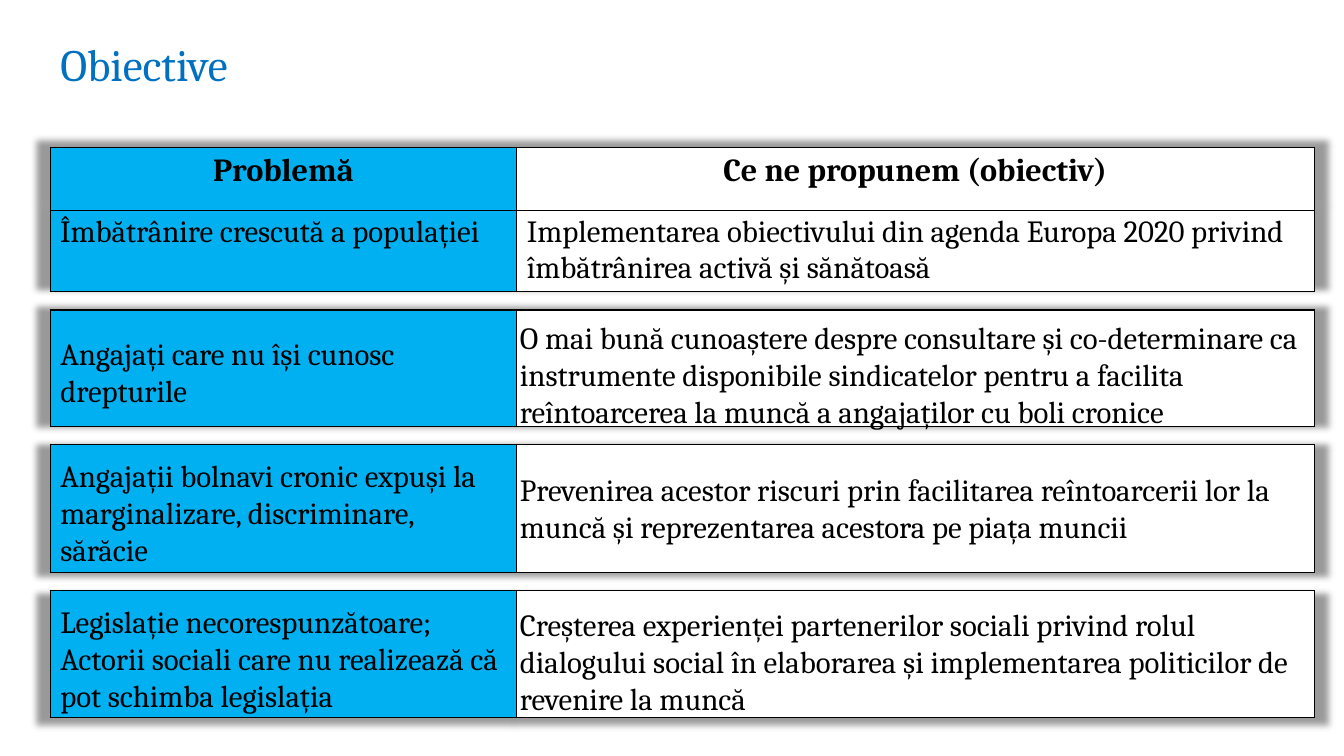
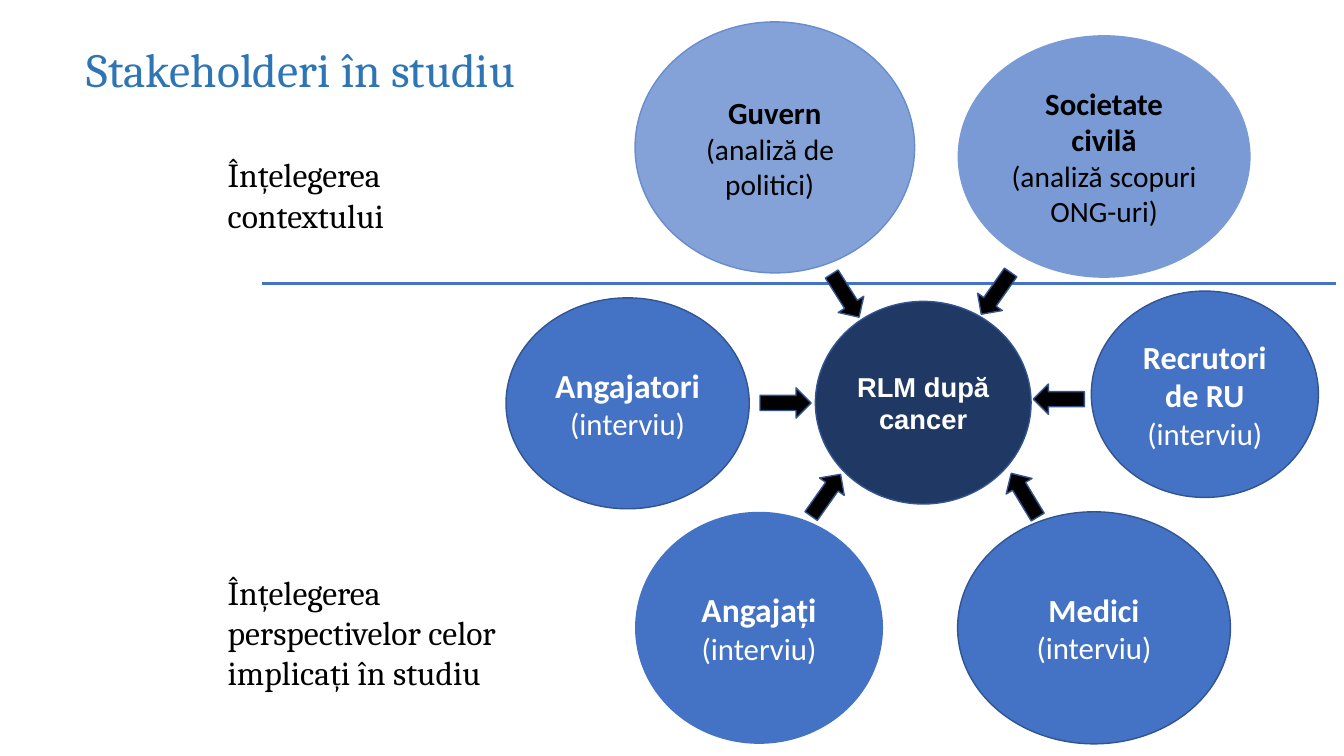
from dataclasses import dataclass
from typing import Any, Optional

from lxml import etree
from pptx import Presentation
from pptx.dml.color import RGBColor
from pptx.enum.shapes import MSO_CONNECTOR, MSO_SHAPE
from pptx.enum.text import MSO_ANCHOR, PP_ALIGN
from pptx.oxml import parse_xml
from pptx.oxml.ns import nsdecls, qn
from pptx.util import Inches, Pt

WIDE, HIGH = Inches(13.33), Inches(7.5)
LEFT, MID = PP_ALIGN.LEFT, PP_ALIGN.CENTER
TOP, MIDDLE = MSO_ANCHOR.TOP, MSO_ANCHOR.MIDDLE
OVAL, ARROW = MSO_SHAPE.OVAL, MSO_SHAPE.RIGHT_ARROW
LINE = MSO_CONNECTOR.STRAIGHT

SERIF, SANS, PLAIN = "Cambria", "Calibri", "Arial"
BLACK, WHITE, SKY = "000000", "FFFFFF", "00B0F0"
BLUE, NAVY, EDGE = "4472C4", "203864", "325491"


@dataclass
class Box:
    """A place in percent of the slide's width and height."""
    x: float
    y: float
    w: float
    h: float


@dataclass
class Text:
    """One paragraph and its look."""
    words: str
    size: float
    color: str = BLACK
    bold: bool = False
    font: str = SERIF
    align: Any = LEFT
    space: Optional[float] = None
    indent: tuple[float, float] = (0, 0)


@dataclass
class Row:
    """A table row, filled or a gap, with its cell texts."""
    high: float
    full: bool = True
    texts: tuple[Text, ...] = ()


@dataclass
class Bubble:
    """An ellipse with a bold name and a note below it."""
    box: Box
    texts: list[Text]
    fill: str = BLUE
    edge: Optional[str] = EDGE
    inset: float = 0.1


@dataclass
class Turn:
    """An arrow's corner and its angle."""
    x: float
    y: float
    angle: float


def color(code: str) -> RGBColor:
    """Turn a hex string into a colour."""
    return RGBColor.from_string(code)


def across(share: float) -> int:
    """Return a share of the slide's width."""
    return int(WIDE * share / 100)


def down(share: float) -> int:
    """Return a share of the slide's height."""
    return int(HIGH * share / 100)


def place(box: Box) -> tuple[int, int, int, int]:
    """Turn a box into slide lengths."""
    return across(box.x), down(box.y), across(box.w), down(box.h)


def apply(item: Any, values: dict[str, Any]) -> None:
    """Set each named value on the item."""
    for name, value in values.items():
        setattr(item, name, value)


def write(frame: Any, texts: list[Text]) -> None:
    """Fill a text frame with styled paragraphs."""
    for index, text in enumerate(texts):
        para = frame.add_paragraph() if index else frame.paragraphs[0]
        apply(para, {"alignment": text.align, "line_spacing": text.space})
        for name, size in zip(("marL", "indent"), text.indent):
            para._p.get_or_add_pPr().set(name, str(Inches(size)))
        run = para.add_run()
        run.text = text.words
        apply(run.font, {"name": text.font, "size": Pt(text.size), "bold": text.bold})
        run.font.color.rgb = color(text.color)


def label(slide: Any, box: Box, texts: list[Text], anchor: Any = TOP) -> None:
    """Add a wrapped text box."""
    frame = slide.shapes.add_textbox(*place(box)).text_frame
    apply(frame, {"word_wrap": True, "vertical_anchor": anchor})
    write(frame, texts)


def title(slide: Any, box: Box, words: str, size: float, tint: str) -> None:
    """Add a slide title."""
    label(slide, box, [Text(words, size, tint, space=0.9)], MIDDLE)


def solid(slide: Any, kind: Any, box: Box, fill: str, edge: Optional[str]) -> Any:
    """Add a filled shape with an optional outline."""
    shape = slide.shapes.add_shape(kind, *place(box))
    shape.shadow.inherit = False
    shape.fill.solid()
    shape.fill.fore_color.rgb = color(fill)
    if edge:
        shape.line.color.rgb = color(edge)
        shape.line.width = Pt(1)
    else:
        shape.line.fill.background()
    return shape


def bubble(slide: Any, item: Bubble) -> None:
    """Draw a bubble with its text."""
    frame = solid(slide, OVAL, item.box, item.fill, item.edge).text_frame
    pad = Inches(item.inset)
    apply(frame, {"word_wrap": True, "vertical_anchor": MIDDLE,
                  "margin_left": pad, "margin_right": pad})
    write(frame, item.texts)


def named(name: str, note: str, tint: str, sizes: tuple[float, float]) -> list[Text]:
    """Return a bold name and a plain note."""
    return [Text(name, sizes[0], tint, True, SANS, MID),
            Text(note, sizes[1], tint, False, SANS, MID)]


def border(cell: Any, full: bool) -> None:
    """Give a cell black borders, for a gap only above and below."""
    props = cell._tc.get_or_add_tcPr()
    ink = f'<a:solidFill><a:srgbClr val="{BLACK}"/></a:solidFill>'
    for index, side in enumerate(("lnL", "lnR", "lnT", "lnB")):
        paint = ink if full or index > 1 else "<a:noFill/>"
        props.insert(index, parse_xml(
            f'<a:{side} {nsdecls("a")} w="12700">{paint}</a:{side}>'))


def dress(cell: Any, full: bool, fill: str) -> None:
    """Set the fill, margins and borders of a cell."""
    if full:
        cell.margin_bottom = 0
        cell.fill.solid()
        cell.fill.fore_color.rgb = color(fill)
    else:
        apply(cell, {"margin_top": 0, "margin_bottom": 0})
        cell.fill.background()
        para = cell.text_frame.paragraphs[0]._p
        etree.SubElement(para, qn("a:endParaRPr")).set("sz", "600")
    border(cell, full)


def grid(slide: Any, x: float, y: float, cols: list[float], rows: list[Row]) -> None:
    """Draw the table with gaps and a soft shadow."""
    box = Box(x, y, sum(cols), sum(row.high for row in rows))
    table = slide.shapes.add_table(len(rows), len(cols), *place(box)).table
    apply(table, {"first_row": False, "horz_banding": False})
    table._tbl.tblPr.insert(0, parse_xml(
        f'<a:effectLst {nsdecls("a")}><a:outerShdw blurRad="63500" sx="102000" '
        f'sy="102000" algn="ctr" rotWithShape="0"><a:srgbClr val="{BLACK}">'
        '<a:alpha val="40000"/></a:srgbClr></a:outerShdw></a:effectLst>'))
    for col, wide in zip(table.columns, cols):
        col.width = across(wide)
    for index, row in enumerate(rows):
        table.rows[index].height = down(row.high)
        for spot, fill in enumerate((SKY, WHITE)):
            dress(table.cell(index, spot), row.full, fill)
        for spot, text in enumerate(row.texts):
            write(table.cell(index, spot).text_frame, [text])


def head(words: str) -> Text:
    """Return a table heading."""
    return Text(words, 23, bold=True, align=MID)


GAP = Row(2.4, False)
ROWS = [
    Row(8.3, texts=(head("Problemă"), head("Ce ne propunem (obiectiv)"))),
    Row(10.8, texts=(Text("Îmbătrânire crescută a populației", 22),
                     Text("Implementarea obiectivului din agenda Europa 2020 "
                          "privind îmbătrânirea activă și sănătoasă", 22))),
    GAP, Row(15.4), GAP, Row(16.9), GAP, Row(16.8),
]
NEAR, FAR = (3.75, 34.3), (37.95, 59.85)
CLAIMS = [
    (NEAR, 43.6, ["Angajați care nu își cunosc drepturile"]),
    (FAR, 41.47, ["O mai bună cunoaștere despre consultare și co-determinare ca "
                  "instrumente disponibile sindicatelor pentru a facilita "
                  "reîntoarcerea la muncă a angajaților cu boli cronice"]),
    (NEAR, 59.73, ["Angajații bolnavi cronic expuși la marginalizare, "
                   "discriminare, sărăcie"]),
    (FAR, 61.6, ["Prevenirea acestor riscuri prin facilitarea reîntoarcerii lor la "
                 "muncă și reprezentarea acestora pe piața muncii"]),
    ((3.75, 34.95), 79.07, ["Legislație necorespunzătoare;", "Actorii sociali care nu "
                            "realizează că pot schimba legislația"]),
    (FAR, 79.47, ["Creșterea experienței partenerilor sociali privind rolul "
                  "dialogului social în elaborarea și implementarea politicilor de "
                  "revenire la muncă"]),
]

TALK = "(interviu)"
BUBBLES = [
    Bubble(Box(60.67, 39.87, 16.05, 26.8),
           [Text("RLM după cancer", 19.5, WHITE, True, PLAIN, MID)], NAVY, inset=0.05),
    Bubble(Box(37.65, 39.4, 18.1, 27.9), named("Angajatori", TALK, WHITE, (24, 22))),
    Bubble(Box(47.25, 67.7, 18.45, 30.7), named("Angajați", TALK, WHITE, (24, 22)),
           edge=None),
    Bubble(Box(71.25, 67.7, 20.3, 30.7), named("Medici", TALK, WHITE, (23, 22))),
    Bubble(Box(71.25, 4.65, 21.8, 32.1),
           named("Societate civilă", "(analiză scopuri ONG-uri)", BLACK, (22, 21)),
           "799AD5", None),
    Bubble(Box(47.25, 2.9, 20.8, 33.2),
           [Text("Guvern", 22, bold=True, font=SANS, align=MID),
            Text("(analiză de politici)", 21, font=SANS, indent=(0.39, -0.19))],
           "84A2D8", "678CCF"),
    Bubble(Box(81.2, 38.5, 16.9, 27.3), named("Recrutori de RU", TALK, WHITE, (23, 22))),
]
TURNS = [Turn(56.55, 51.3, 0), Turn(59.55, 63.5, 305.2), Turn(61, 37.1, 57.6),
         Turn(72.2, 36.8, 125.1), Turn(76.88, 50.8, 180), Turn(74.33, 63.5, 238.8)]
NOTES = [(Box(16.2, 19.75, 20.8, 12.1), "Înțelegerea contextului"),
         (Box(16.2, 74.95, 23.1, 17.5),
          "Înțelegerea perspectivelor celor implicați în studiu")]


def goals(slide: Any) -> None:
    """Draw the slide of problems and goals."""
    title(slide, Box(3.75, 4.8, 86.3, 8.1), "Obiective", 32, "0070C0")
    grid(slide, 3.73, 19.5, [34.73, 59.35], ROWS)
    for (x, wide), y, lines in CLAIMS:
        label(slide, Box(x, y, wide, 16.1), [Text(line, 22) for line in lines])


def circle(slide: Any) -> None:
    """Draw the slide of stakeholders."""
    line = slide.shapes.add_connector(
        LINE, across(19.5), down(37.5), across(99.4), down(37.5))
    line.line.color.rgb = color(BLUE)
    line.line.width = Pt(2.5)
    etree.SubElement(line._element.spPr, qn("a:effectLst"))
    title(slide, Box(5.7, 5.75, 35.6, 7.5), "Stakeholderi în studiu", 34, "2E75B6")
    for item in BUBBLES:
        bubble(slide, item)
    for turn in TURNS:
        arrow = solid(slide, ARROW, Box(turn.x, turn.y, 3.8, 4), BLACK, EDGE)
        arrow.rotation = turn.angle
    for box, words in NOTES:
        label(slide, box, [Text(words, 24)])


def main() -> None:
    """Build and save the slides."""
    deck = Presentation()
    apply(deck, {"slide_width": WIDE, "slide_height": HIGH})
    for draw in (goals, circle):
        draw(deck.slides.add_slide(deck.slide_layouts[6]))
    deck.save("out.pptx")


if __name__ == "__main__":
    main()
